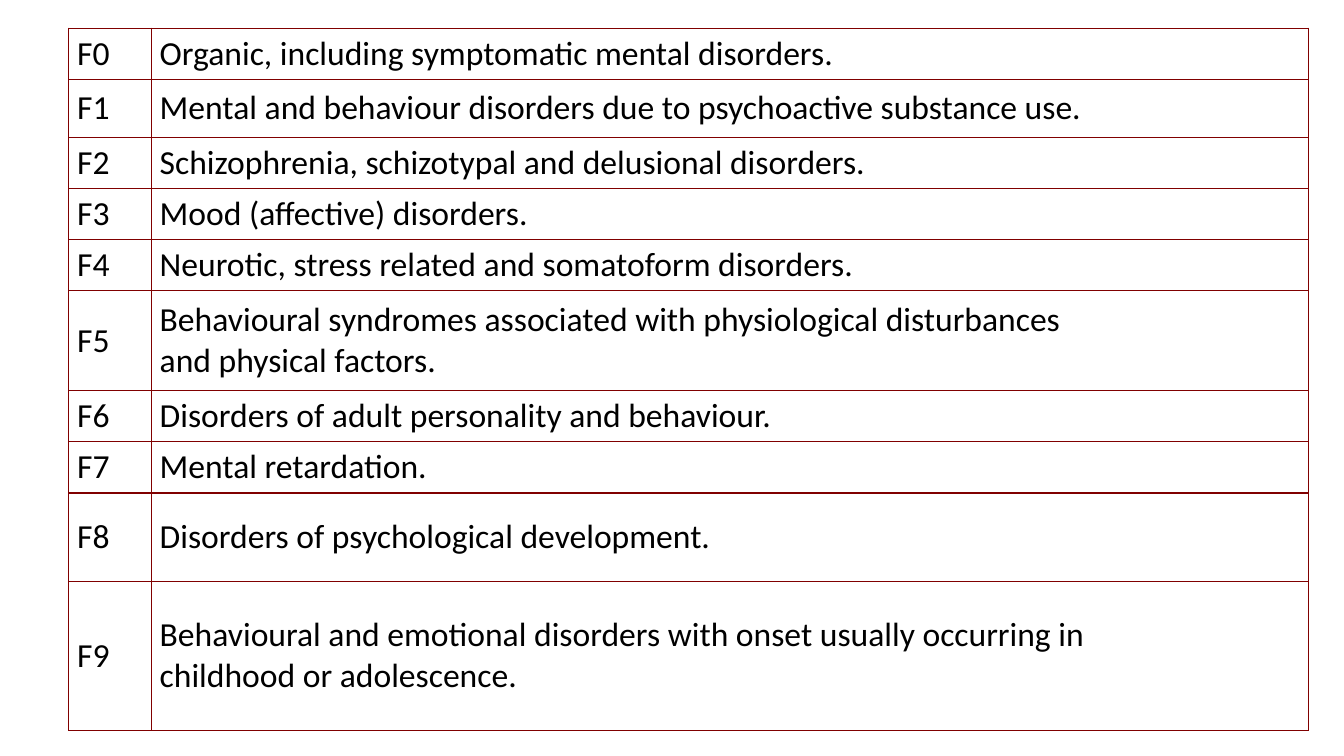
"""Build a slide with a table of the F0 to F9 categories of mental disorders."""
import pptx
import pptx.dml.color
import pptx.enum.text
import pptx.oxml
import pptx.oxml.ns
import pptx.util

Pt = pptx.util.Pt
PP_ALIGN = pptx.enum.text.PP_ALIGN


def rgb(color):
    return pptx.dml.color.RGBColor.from_string(color)


def add_borders(cell, color, width):
    tc_pr = cell._tc.get_or_add_tcPr()
    for i, side in enumerate("LRTB"):
        tc_pr.insert(i, pptx.oxml.parse_xml(
            f'<a:ln{side} {pptx.oxml.ns.nsdecls("a")} w="{Pt(width)}">'
            f'<a:solidFill><a:srgbClr val="{color}"/></a:solidFill></a:ln{side}>'))


categories = [
    (36.5, ["Organic, including symptomatic mental disorders."]),
    (41.5, ["Mental and behaviour disorders due to psychoactive substance use."]),
    (36.5, ["Schizophrenia, schizotypal and delusional disorders."]),
    (36.5, ["Mood (affective) disorders."]),
    (36.5, ["Neurotic, stress related and somatoform disorders."]),
    (71.5, ["Behavioural syndromes associated with physiological disturbances",
            "and physical factors."]),
    (36.5, ["Disorders of adult personality and behaviour."]),
    (36.5, ["Mental retardation."]),
    (63, ["Disorders of psychological development."]),
    (106.5, ["Behavioural and emotional disorders with onset usually occurring in",
             "childhood or adolescence."]),
]
col_widths = [59, 826.5]

prs = pptx.Presentation()
prs.slide_width, prs.slide_height = Pt(960), Pt(540)
s = prs.slides.add_slide(prs.slide_layouts[6])

table = s.shapes.add_table(
    len(categories), len(col_widths), Pt(49), Pt(20.2), Pt(sum(col_widths)),
    Pt(sum(height for height, lines in categories))).table
table.first_row = table.horz_banding = False
for col, width in zip(table.columns, col_widths):
    col.width = Pt(width)

for row, (height, lines) in enumerate(categories):
    table.rows[row].height = Pt(height)
    for col, (texts, align) in enumerate([([f"F{row}"], PP_ALIGN.JUSTIFY),
                                          (lines, PP_ALIGN.LEFT)]):
        cell = table.cell(row, col)
        cell.fill.background()
        add_borders(cell, "800000", 1)
        cell.vertical_anchor = pptx.enum.text.MSO_ANCHOR.MIDDLE
        cell.margin_left = Pt(6.1)
        cell.margin_right = cell.margin_top = cell.margin_bottom = Pt(0.7)
        p = cell.text_frame.paragraphs[0]
        p.alignment = align
        for i, text in enumerate(texts):
            if i:
                p.add_line_break()
            r = p.add_run()
            r.text = text
            r.font.name, r.font.size = "Calibri", Pt(24)
            r.font.color.rgb = rgb("000000")

prs.save("out.pptx")
